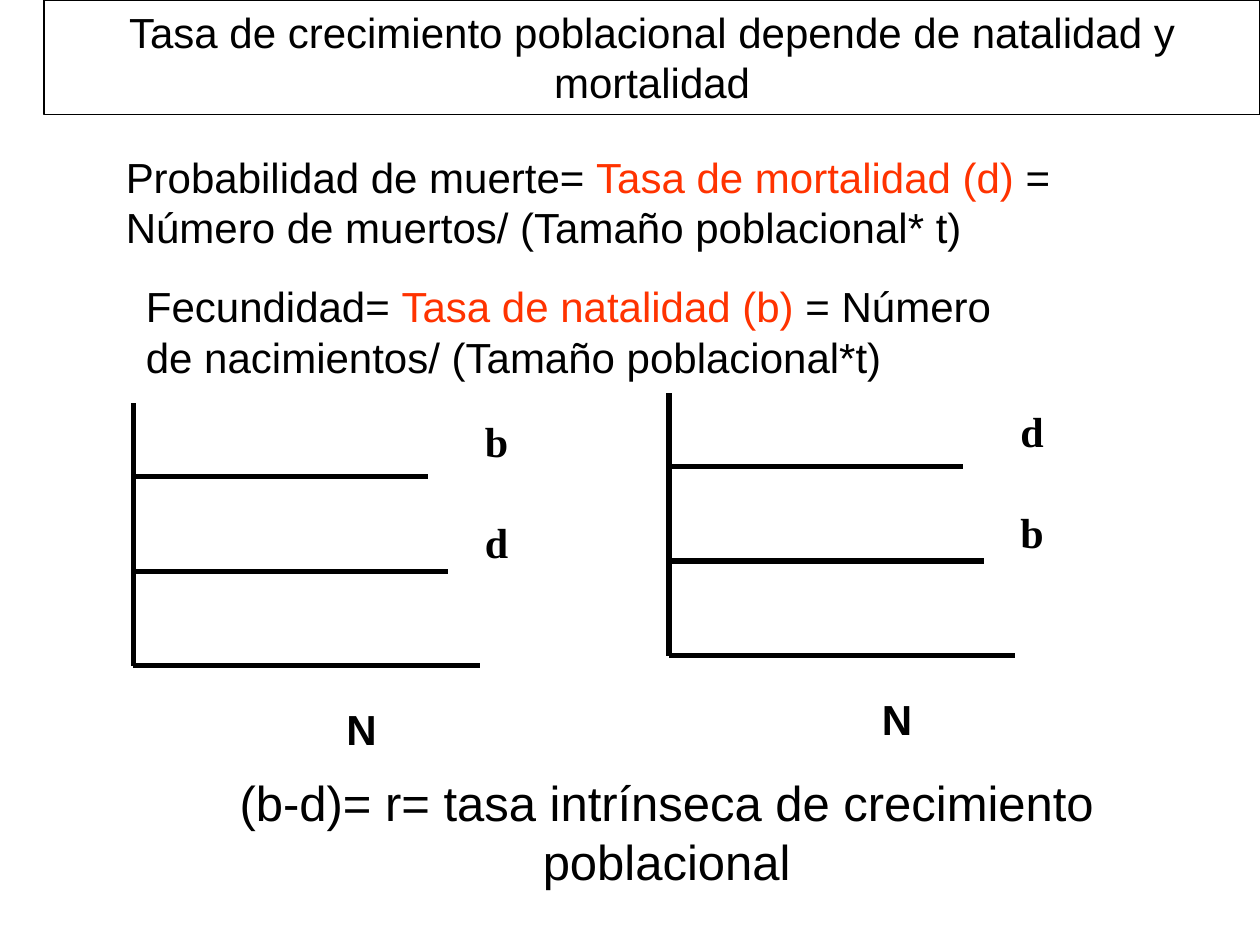
from pptx import Presentation
from pptx import util as u
from pptx.dml.color import RGBColor
from pptx.enum import shapes, text
from pptx.oxml.ns import qn
from lxml import etree

Pt = u.Pt
BLACK, RED, WHITE = "000000", "FF3300", "FFFFFF"


def rgb(value):
    return RGBColor.from_string(value)


def add_text(sp, paragraphs, size=24, font="Arial", bold=False, align=text.PP_ALIGN.LEFT, gap=0):
    """Fill a shape; each paragraph is a list of (text, colour) runs."""
    tf = sp.text_frame
    tf.word_wrap = True
    tf.vertical_anchor = text.MSO_ANCHOR.TOP
    for i, runs in enumerate(paragraphs):
        p = tf.add_paragraph() if i else tf.paragraphs[0]
        p.alignment = align
        p.space_before = Pt(gap if i else 0)
        p.font.size, p.font.name, p.font.bold = Pt(size), font, bold
        for content, colour in runs:
            r = p.add_run()
            r.text = content
            r.font.color.rgb = rgb(colour)


prs = Presentation()
prs.slide_width, prs.slide_height = Pt(720), Pt(540)
s = prs.slides.add_slide(prs.slide_layouts[6])

# Definitions of the two rates
definitions = [
    (64.8, 82.8, 563.8, "Probabilidad de muerte= ", "Tasa de mortalidad (d)",
     " = Número de muertos/ (Tamaño poblacional* t)"),
    (76.3, 157, 527.8, "Fecundidad= ", "Tasa de natalidad (b)",
     " = Número de nacimientos/ (Tamaño poblacional*t)"),
]
for x, y, w, term, rate, formula in definitions:
    sp = s.shapes.add_textbox(Pt(x), Pt(y), Pt(w), Pt(64.8))
    add_text(sp, [[(term, BLACK), (rate, RED), (formula, BLACK)]])

# Two diagrams: axes, constant rates and labels
for x, y, upper, lower in [(76.3, 230.4, "b", "d"), (382.3, 224.6, "d", "b")]:
    lines = [
        (0, 0, 0, 150),      # vertical axis
        (0, 150, 198, 150),  # horizontal axis
        (0, 96, 180, 96),    # lower rate
        (0, 42, 168, 42),    # upper rate
    ]
    for x1, y1, x2, y2 in lines:
        line = s.shapes.add_connector(shapes.MSO_CONNECTOR.STRAIGHT,
                                      Pt(x + x1), Pt(y + y1), Pt(x + x2), Pt(y + y2))
        line.line.color.rgb = rgb(BLACK)
        line.line.width = Pt(3)
        etree.SubElement(line._element.spPr, qn("a:effectLst"))

    sp = s.shapes.add_textbox(Pt(x + 114.5), Pt(y + 168), Pt(48), Pt(36))
    add_text(sp, [[("N", BLACK)]], bold=True)
    sp = s.shapes.add_textbox(Pt(x + 193.7), Pt(y + 3.6), Pt(25.2), Pt(93.6))
    add_text(sp, [[(upper, BLACK)], [(lower, BLACK)]],
             font="Times New Roman", bold=True, gap=28.8)

# Conclusion and title
boxes = [
    (108, 437.8, 545.8, 74.2, 28, "(b-d)= r= tasa intrínseca de crecimiento poblacional"),
    (25.2, 0, 694.8, 65.5, 24, "Tasa de crecimiento poblacional depende de natalidad y mortalidad"),
]
for x, y, w, h, size, content in boxes:
    sp = s.shapes.add_shape(shapes.MSO_SHAPE.RECTANGLE, Pt(x), Pt(y), Pt(w), Pt(h))
    sp.shadow.inherit = False
    sp.fill.solid()
    sp.fill.fore_color.rgb = rgb(WHITE)
    sp.line.fill.background()
    add_text(sp, [[(content, BLACK)]], size=size, align=text.PP_ALIGN.CENTER)

# The title, added last, is an outlined box without fill
sp.fill.background()
sp.line.color.rgb = rgb(BLACK)
sp.line.width = Pt(0.75)

prs.save("out.pptx")
